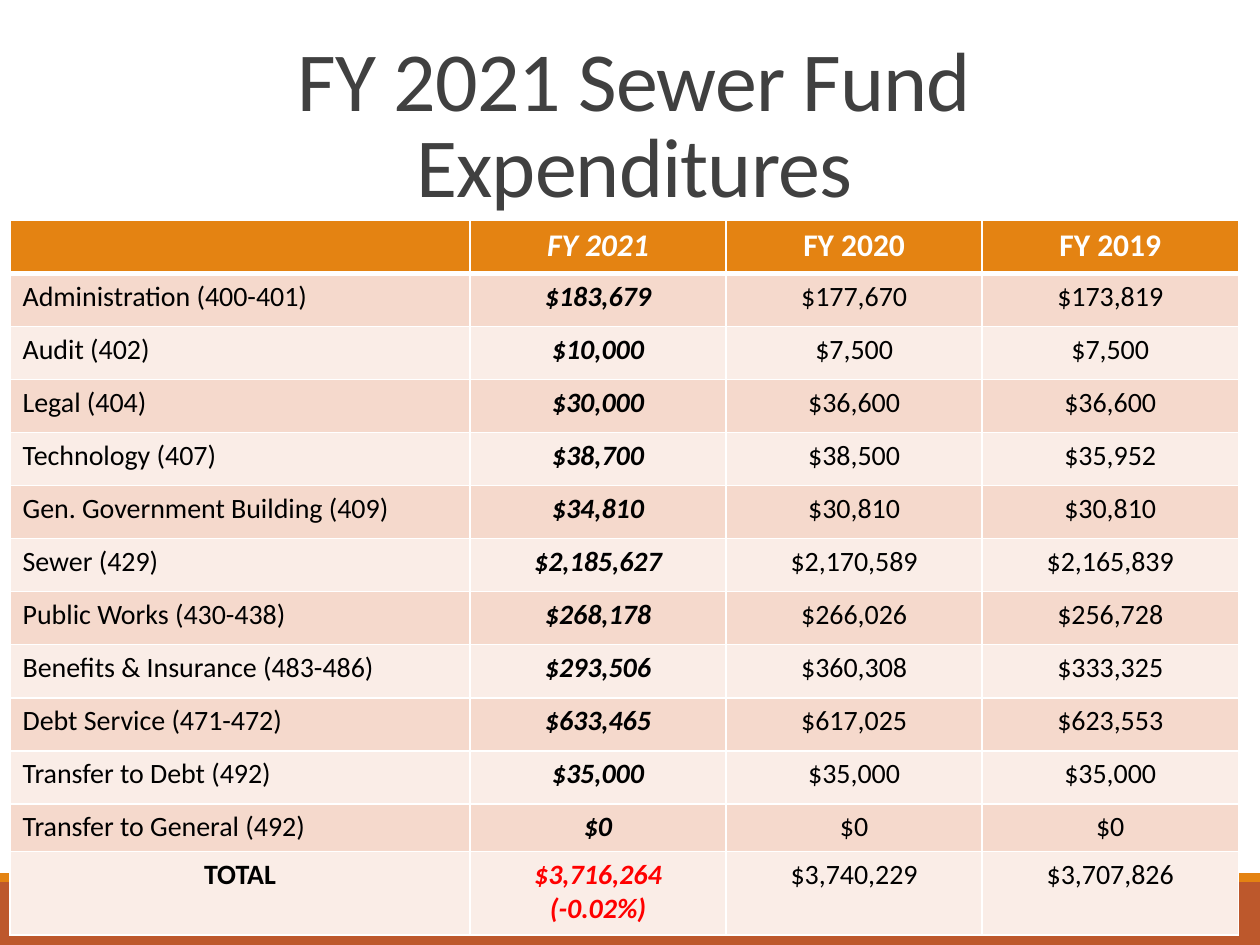
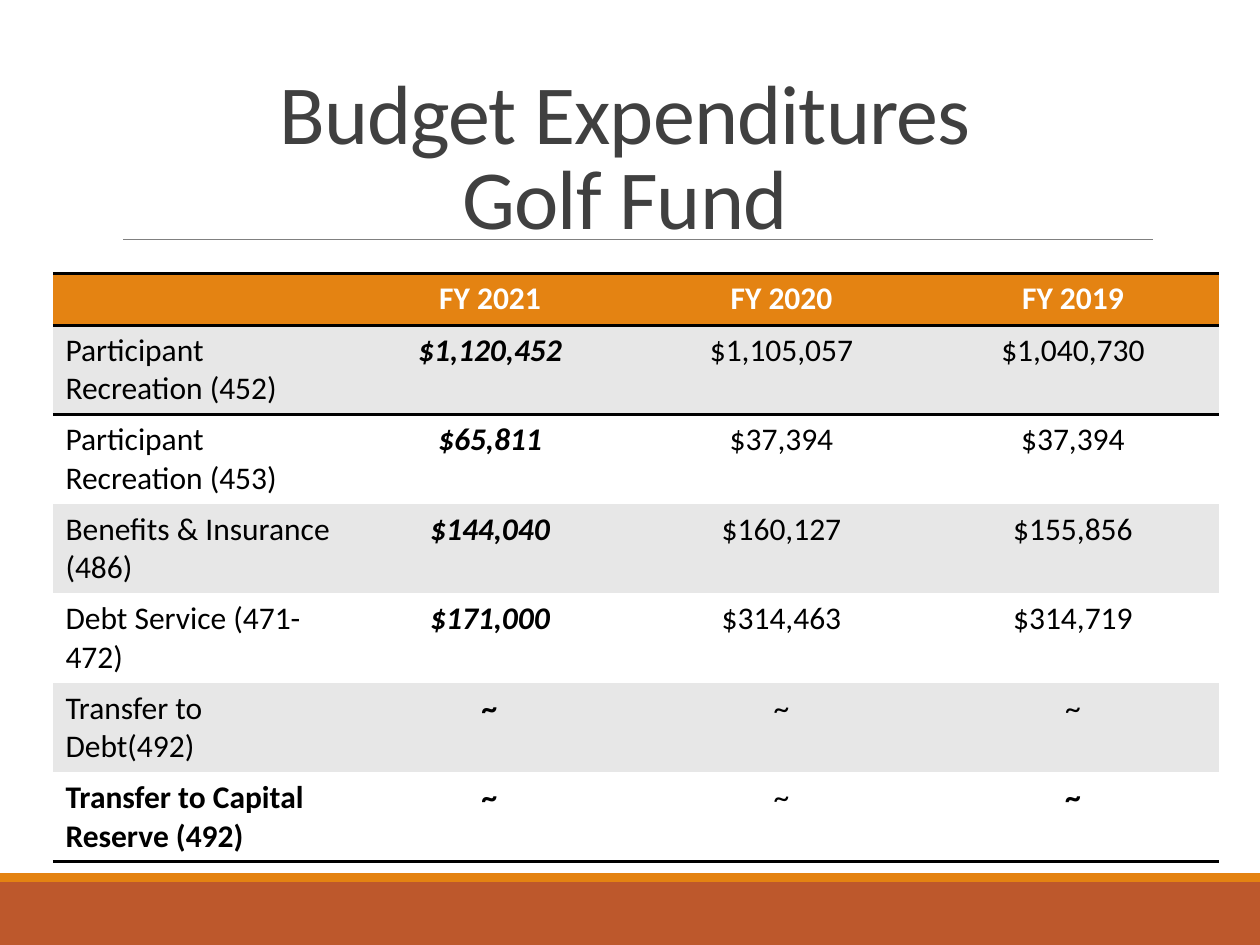
import pptx
import pptx.util
import pptx.dml.color
import pptx.enum.shapes
import pptx.enum.text
import pptx.oxml
import pptx.oxml.ns
import lxml.etree

COLORS = {
    "rust": "BD582C", "orange": "E48312", "rule": "808080", "title": "404040",
    "black": "000000", "white": "FFFFFF", "red": "FF0000",
    "peach": "F5D9CC", "pale_peach": "FAEDE7", "gray": "E7E7E7",
}
FONT = "Calibri"
COLUMNS, ROWS = 100, 75
UNIT = pptx.util.Inches(10) // COLUMNS
PLAIN_TABLE_STYLE = "{2D5ABB26-0587-4C30-8999-92F81FD0307C}"
LEFT, CENTER = pptx.enum.text.PP_ALIGN.LEFT, pptx.enum.text.PP_ALIGN.CENTER
YEARS = ["", "FY 2021", "FY 2020", "FY 2019"]

SEWER_EXPENDITURES = [
    ["Administration (400-401)", "$183,679", "$177,670", "$173,819"],
    ["Audit (402)", "$10,000", "$7,500", "$7,500"],
    ["Legal (404)", "$30,000", "$36,600", "$36,600"],
    ["Technology (407)", "$38,700", "$38,500", "$35,952"],
    ["Gen. Government Building (409)", "$34,810", "$30,810", "$30,810"],
    ["Sewer (429)", "$2,185,627", "$2,170,589", "$2,165,839"],
    ["Public Works (430-438)", "$268,178", "$266,026", "$256,728"],
    ["Benefits & Insurance (483-486)", "$293,506", "$360,308", "$333,325"],
    ["Debt Service (471-472)", "$633,465", "$617,025", "$623,553"],
    ["Transfer to Debt (492)", "$35,000", "$35,000", "$35,000"],
    ["Transfer to General (492)", "$0", "$0", "$0"],
    ["TOTAL", "$3,716,264\n(-0.02%)", "$3,740,229", "$3,707,826"],
]
GOLF_EXPENDITURES = [
    ["Participant Recreation (452)", "$1,120,452", "$1,105,057", "$1,040,730"],
    ["Participant Recreation (453)", "$65,811", "$37,394", "$37,394"],
    ["Benefits & Insurance (486)", "$144,040", "$160,127", "$155,856"],
    ["Debt Service (471-472)", "$171,000", "$314,463", "$314,719"],
    ["Transfer to Debt(492)", "~", "~", "~"],
    ["Transfer to Capital Reserve (492)", "~", "~", "~"],
]


def grid(*lengths):
    return [round(length * UNIT) for length in lengths]


def color(name):
    return pptx.dml.color.RGBColor.from_string(COLORS[name])


def style_text(text_frame, size, color_name, bold=False, italic=False, alignment=LEFT):
    for paragraph in text_frame.paragraphs:
        paragraph.alignment = alignment
        for run in paragraph.runs:
            run.font.name = FONT
            run.font.size = pptx.util.Pt(size)
            run.font.color.rgb = color(color_name)
            run.font.bold = bold
            run.font.italic = italic


def add_band(slide, top, height, color_name):
    band = slide.shapes.add_shape(
        pptx.enum.shapes.MSO_SHAPE.RECTANGLE, *grid(0, top, COLUMNS, height))
    band.shadow.inherit = False
    band.fill.solid()
    band.fill.fore_color.rgb = color(color_name)
    band.line.fill.background()


def add_title_rule(slide):
    rule = slide.shapes.add_connector(
        pptx.enum.shapes.MSO_CONNECTOR.STRAIGHT, *grid(9.8, 19, 91.5, 19))
    rule.line.color.rgb = color("rule")
    rule.line.width = pptx.util.Pt(0.5)
    lxml.etree.SubElement(rule._element.spPr, pptx.oxml.ns.qn("a:effectLst"))


def add_title(slide, text, position):
    text_frame = slide.shapes.add_textbox(*grid(*position)).text_frame
    text_frame.word_wrap = True
    text_frame.vertical_anchor = pptx.enum.text.MSO_ANCHOR.BOTTOM
    paragraph = text_frame.paragraphs[0]
    paragraph.text = text
    paragraph.line_spacing = 0.85
    style_text(text_frame, 48, "title", alignment=CENTER)
    for run in paragraph.runs:
        run._r.get_or_add_rPr().set("spc", "-50")


def add_base_slide(presentation, title, title_position):
    slide = presentation.slides.add_slide(presentation.slide_layouts[6])
    add_band(slide, 70, 5, "rust")
    add_band(slide, 69.3, 0.7, "orange")
    add_title_rule(slide)
    add_title(slide, title, title_position)
    return slide


def set_borders(cell, borders):
    properties = cell._tc.get_or_add_tcPr()
    for side in "LRTB":
        if side in borders:
            color_name, width = borders[side]
            properties.append(pptx.oxml.parse_xml(
                f'<a:ln{side} {pptx.oxml.ns.nsdecls("a")} w="{pptx.util.Pt(width)}">'
                f'<a:solidFill><a:srgbClr val="{COLORS[color_name]}"/></a:solidFill>'
                f'</a:ln{side}>'))


def add_budget_table(slide, position, widths, heights, entries, size, bands, row_borders):
    rows = [YEARS] + entries
    shape = slide.shapes.add_table(
        len(rows), len(YEARS), *grid(*position, sum(widths), sum(heights)))
    table = shape.table
    table.horz_banding = False
    style = table._tbl.tblPr.find(pptx.oxml.ns.qn("a:tableStyleId"))
    style.text = PLAIN_TABLE_STYLE
    for column, width in zip(table.columns, grid(*widths)):
        column.width = width
    for row, height in zip(table.rows, grid(*heights)):
        row.height = height
    for row_index, entry in enumerate(rows):
        header = row_index == 0
        for column_index, text in enumerate(entry):
            cell = table.cell(row_index, column_index)
            set_borders(cell, row_borders(row_index))
            cell.fill.solid()
            cell.fill.fore_color.rgb = color(
                "orange" if header else bands[(row_index - 1) % 2])
            cell.text_frame.text = text
            current = column_index == 1
            style_text(cell.text_frame, 18 if header else size,
                       "white" if header else "black",
                       bold=header or current, italic=current and not header,
                       alignment=CENTER if column_index else LEFT)
    return table


def sewer_borders(row_index):
    borders = {side: ("white", 1) for side in "LRTB"}
    if row_index == 0:
        borders["B"] = ("white", 3)
    elif row_index == 1:
        borders["T"] = ("white", 3)
    return borders


def golf_borders(row_index):
    if row_index == 0:
        return {"T": ("black", 2), "B": ("black", 2)}
    if row_index == 1:
        return {"T": ("black", 2)}
    if row_index == len(GOLF_EXPENDITURES):
        return {"B": ("black", 2)}
    return {}


def build_sewer_slide(presentation):
    slide = add_base_slide(
        presentation, "FY 2021 Sewer Fund\nExpenditures", (8.2, 0.8, 84.3, 16.7))
    table = add_budget_table(
        slide, (0.8, 17.5), [36.5] + [20.33] * 3, [4.21] * 11 + [3.8, 6.6],
        SEWER_EXPENDITURES, 16, ["peach", "pale_peach"], sewer_borders)
    total = len(SEWER_EXPENDITURES)
    style_text(table.cell(0, 1).text_frame, 18, "white", True, True, CENTER)
    style_text(table.cell(total, 0).text_frame, 16, "black", True, False, CENTER)
    style_text(table.cell(total, 1).text_frame, 16, "red", True, True, CENTER)


def build_golf_slide(presentation):
    slide = add_base_slide(
        presentation, "Budget Expenditures\nGolf Fund", (2.5, 2.5, 94.2, 17.6))
    table = add_budget_table(
        slide, (4.2, 21.7), [23.13] * 4, [4.1] + [7.1] * 6,
        GOLF_EXPENDITURES, 18, ["gray", "white"], golf_borders)
    last = len(GOLF_EXPENDITURES)
    style_text(table.cell(last, 0).text_frame, 18, "black", True)
    style_text(table.cell(last, 3).text_frame, 18, "black", True, False, CENTER)


def main():
    presentation = pptx.Presentation()
    presentation.slide_width = COLUMNS * UNIT
    presentation.slide_height = ROWS * UNIT
    build_sewer_slide(presentation)
    build_golf_slide(presentation)
    presentation.save("out.pptx")


if __name__ == "__main__":
    main()
